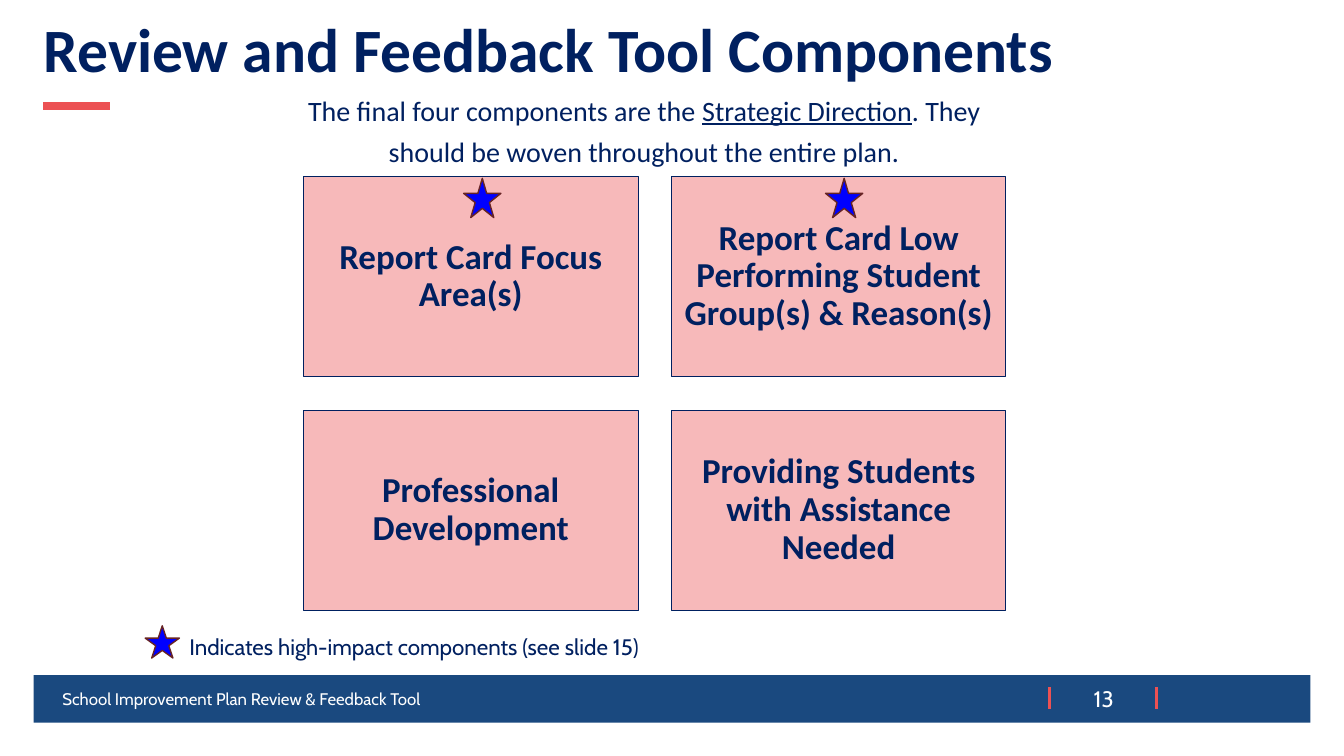
from dataclasses import dataclass

from lxml import etree
from pptx import Presentation
from pptx.dml.color import RGBColor
from pptx.enum.shapes import MSO_CONNECTOR, MSO_SHAPE
from pptx.enum.text import MSO_ANCHOR, PP_ALIGN
from pptx.oxml.ns import qn
from pptx.util import Inches, Pt

RECTANGLE, STAR = MSO_SHAPE.RECTANGLE, MSO_SHAPE.STAR_5_POINT
STRAIGHT = MSO_CONNECTOR.STRAIGHT
LEFT, CENTER = PP_ALIGN.LEFT, PP_ALIGN.CENTER
TOP, MIDDLE = MSO_ANCHOR.TOP, MSO_ANCHOR.MIDDLE

NAVY, BAND_BLUE, CORAL, PINK = "002060", "1A497F", "EC5153", "F7B9BA"
STAR_BLUE, STAR_EDGE, WHITE = "0000FF", "672424", "FFFFFF"

deck = Presentation()
deck.slide_width, deck.slide_height = Inches(13.33), Inches(7.5)
slide = deck.slides.add_slide(deck.slide_layouts[6])
UNIT = deck.slide_width / 40


@dataclass(frozen=True)
class Area:
    column: float
    row: float
    columns: float
    rows: float

    def emu(self) -> list[int]:
        return [grid(n) for n in (self.column, self.row, self.columns, self.rows)]


@dataclass(frozen=True)
class Style:
    size: float
    font: str = "Calibri"
    color: str = NAVY
    bold: bool = False
    align: PP_ALIGN = LEFT
    anchor: MSO_ANCHOR = TOP
    spacing: float = 1.0


@dataclass(frozen=True)
class Label:
    area: Area
    style: Style
    runs: tuple[str, ...]
    underlined: str = ""


@dataclass(frozen=True)
class Rule:
    start: tuple[float, float]
    end: tuple[float, float]
    weight: float


def grid(units: float) -> int:
    return round(units * UNIT)


def rgb(value: str) -> RGBColor:
    return RGBColor.from_string(value)


def write(frame, style: Style, runs: tuple[str, ...], underlined: str = "") -> None:
    frame.word_wrap = True
    frame.vertical_anchor = style.anchor
    paragraph = frame.paragraphs[0]
    paragraph.alignment = style.align
    paragraph.line_spacing = style.spacing
    font = paragraph.font
    font.name, font.size, font.bold = style.font, Pt(style.size), style.bold
    font.color.rgb = rgb(style.color)
    for words in runs:
        run = paragraph.add_run()
        run.text = words
        if words == underlined:
            run.font.underline = True


def draw_label(label: Label) -> None:
    box = slide.shapes.add_textbox(*label.area.emu())
    write(box.text_frame, label.style, label.runs, label.underlined)


def draw_shape(kind: MSO_SHAPE, area: Area, fill: str, edge: str = "", weight: float = 0):
    shape = slide.shapes.add_shape(kind, *area.emu())
    shape.shadow.inherit = False
    shape.fill.solid()
    shape.fill.fore_color.rgb = rgb(fill)
    if edge:
        shape.line.color.rgb = rgb(edge)
        shape.line.width = Pt(weight)
    else:
        shape.line.fill.background()
    return shape


def draw_rule(rule: Rule) -> None:
    ends = [grid(n) for n in rule.start + rule.end]
    connector = slide.shapes.add_connector(STRAIGHT, *ends)
    connector.line.color.rgb = rgb(CORAL)
    connector.line.width = Pt(rule.weight)
    etree.SubElement(connector._element.spPr, qn("a:effectLst"))


def draw_card(index: int, component: str) -> None:
    row, column = divmod(index, 2)
    area = Area(9.03 + column * 10.95, 5.25 + row * 6.96, 9.96, 5.97)
    card = draw_shape(RECTANGLE, area, PINK, NAVY, 0.75)
    frame = card.text_frame
    frame.margin_left = frame.margin_right = Inches(0.1)
    frame.margin_top = frame.margin_bottom = Inches(0.1)
    write(frame, CARD_STYLE, (component,))


CARD_STYLE = Style(25, bold=True, align=CENTER, anchor=MIDDLE, spacing=0.9)
COMPONENTS = (
    "Report Card Focus Area(s)",
    "Report Card Low Performing Student Group(s) & Reason(s)",
    "Professional Development",
    "Providing Students with Assistance Needed",
)
RULES = (
    Rule((1.29, 3.15), (3.27, 3.15), 6),
    Rule((31.23, 20.46), (31.23, 21.12), 2.25),
    Rule((34.41, 20.46), (34.41, 21.12), 2.25),
)
HIGH_IMPACT_STARS = (
    Area(13.8, 5.31, 1.11, 1.17),
    Area(24.57, 5.31, 1.11, 1.17),
    Area(4.32, 18.63, 1.02, 0.96),
)
LABELS = (
    Label(Area(1, 0.42, 38, 2.31), Style(44, bold=True, spacing=0.9),
          ("Review and Feedback Tool Components",)),
    Label(Area(7.92, 2.4, 22.5, 1.65), Style(20, align=CENTER, spacing=1.23),
          ("The final four components are the ", "Strategic Direction",
           ". They should be woven throughout the entire plan."),
          "Strategic Direction"),
    Label(Area(5.34, 18.51, 15.51, 1.2), Style(16, "Cabin", spacing=1.23),
          ("Indicates high-impact components (see slide 15)",)),
    Label(Area(1.56, 20.19, 25.41, 1.2), Style(12, "Cabin", WHITE, anchor=MIDDLE),
          ("School Improvement Plan Review & Feedback Tool",)),
    Label(Area(31.89, 20.25, 1.92, 1.11),
          Style(16, "Cabin", WHITE, align=CENTER, anchor=MIDDLE), ("13",)),
)


def main() -> None:
    draw_shape(RECTANGLE, Area(1, 20.1, 38, 1.41), BAND_BLUE)
    for rule in RULES:
        draw_rule(rule)
    for index, component in enumerate(COMPONENTS):
        draw_card(index, component)
    for label in LABELS:
        draw_label(label)
    for area in HIGH_IMPACT_STARS:
        draw_shape(STAR, area, STAR_BLUE, STAR_EDGE, 1)
    deck.save("out.pptx")


if __name__ == "__main__":
    main()
